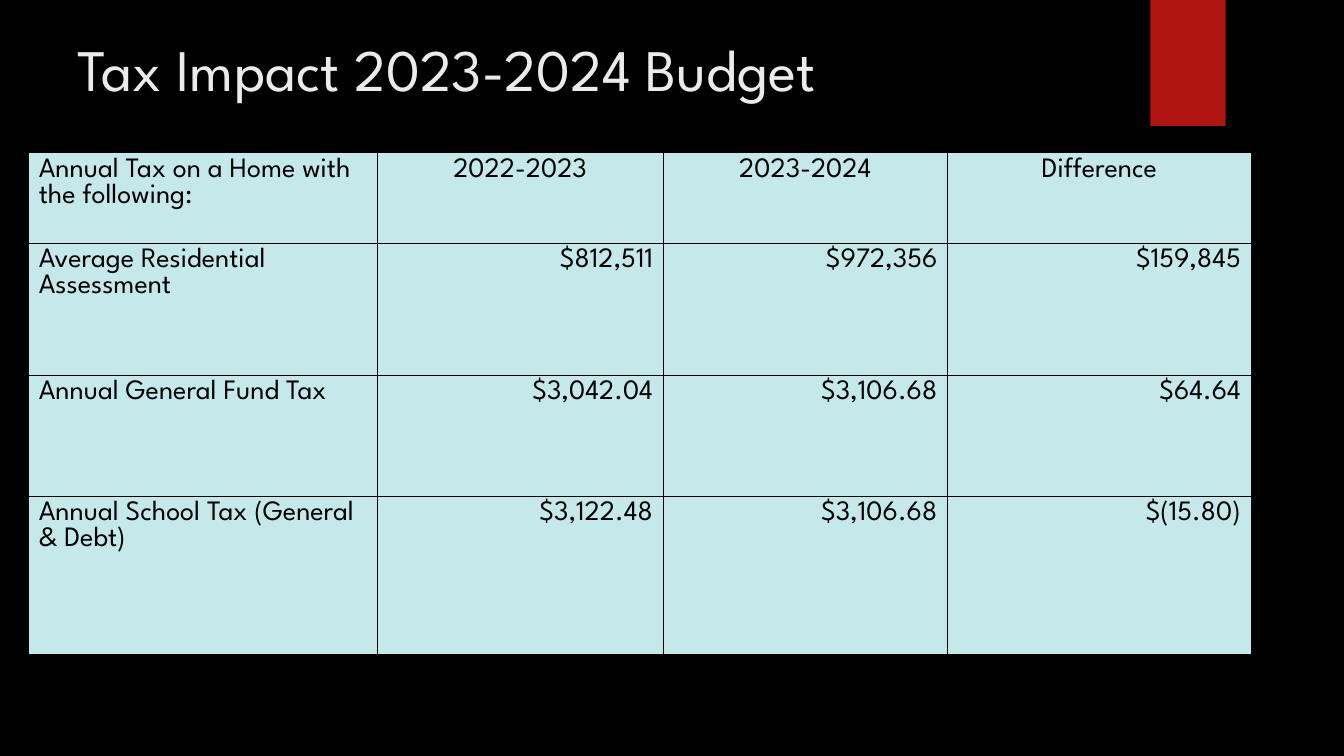
"""Build the tax impact slide for the 2023-2024 budget."""
from dataclasses import dataclass

from lxml import etree
from pptx import Presentation
from pptx.dml.color import RGBColor
from pptx.enum.shapes import MSO_SHAPE
from pptx.enum.text import MSO_ANCHOR, PP_ALIGN
from pptx.oxml.ns import qn
from pptx.slide import Slide
from pptx.table import _Cell
from pptx.text.text import _Paragraph
from pptx.util import Pt

RECTANGLE = MSO_SHAPE.RECTANGLE
MIDDLE = MSO_ANCHOR.MIDDLE
LEFT, CENTER, RIGHT = PP_ALIGN.LEFT, PP_ALIGN.CENTER, PP_ALIGN.RIGHT

BLACK = RGBColor(0x00, 0x00, 0x00)
RED = RGBColor(0xB0, 0x15, 0x13)
OFF_WHITE = RGBColor(0xEB, 0xEB, 0xEB)
PALE_TEAL = RGBColor(0xC5, 0xE8, 0xEA)

FONT_NAME = "League Spartan"
TITLE_SIZE = 42
TABLE_SIZE = 20
BLANK_LAYOUT = 6
COLUMN_WIDTHS = (248.9, 204.3, 203.2, 216.8)
ROW_HEIGHTS = (64.8, 94.3, 86.4, 113)


@dataclass(frozen=True)
class Box:
    """Position and size in points."""

    left: float
    top: float
    width: float
    height: float

    def lengths(self) -> tuple[Pt, Pt, Pt, Pt]:
        """Return the four measures as lengths."""
        return Pt(self.left), Pt(self.top), Pt(self.width), Pt(self.height)


@dataclass(frozen=True)
class TaxRow:
    """One table row: a label and its three values."""

    label: str
    previous: str
    current: str
    difference: str


TITLE_BOX = Box(48.2, 11.5, 741, 73.4)
RIBBON_BOX = Box(821.8, 0, 53.8, 90)
TABLE_BOX = Box(20.5, 109, sum(COLUMN_WIDTHS), sum(ROW_HEIGHTS))

TAX_ROWS = (
    TaxRow("Annual Tax on a Home with the following:", "2022-2023", "2023-2024", "Difference"),
    TaxRow("Average Residential Assessment", "$812,511", "$972,356", "$159,845"),
    TaxRow("Annual General Fund Tax", "$3,042.04", "$3,106.68", "$64.64"),
    TaxRow("Annual School Tax (General & Debt)", "$3,122.48", "$3,106.68", "$(15.80)"),
)


def add_run(paragraph: _Paragraph, text: str, size: float, color: RGBColor) -> None:
    """Add one formatted run to a paragraph."""
    run = paragraph.add_run()
    run.text = text
    run.font.name = FONT_NAME
    run.font.size = Pt(size)
    run.font.color.rgb = color


def add_ribbon(slide: Slide) -> None:
    """Draw the red ribbon at the top edge."""
    ribbon = slide.shapes.add_shape(RECTANGLE, *RIBBON_BOX.lengths())
    ribbon.shadow.inherit = False
    ribbon.fill.solid()
    ribbon.fill.fore_color.rgb = RED
    ribbon.line.fill.background()


def add_title(slide: Slide, text: str) -> None:
    """Write the slide title."""
    frame = slide.shapes.add_textbox(*TITLE_BOX.lengths()).text_frame
    frame.word_wrap = True
    frame.vertical_anchor = MIDDLE
    add_run(frame.paragraphs[0], text, TITLE_SIZE, OFF_WHITE)


def add_borders(cell: _Cell, color: RGBColor) -> None:
    """Give a cell a one-point line on each side."""
    properties = cell._tc.get_or_add_tcPr()
    for side in ("a:lnL", "a:lnR", "a:lnT", "a:lnB"):
        line = etree.SubElement(properties, qn(side), w=str(Pt(1)))
        fill = etree.SubElement(line, qn("a:solidFill"))
        etree.SubElement(fill, qn("a:srgbClr"), val=str(color))


def fill_cell(cell: _Cell, text: str, alignment: PP_ALIGN) -> None:
    """Style a cell and write its text."""
    add_borders(cell, BLACK)
    cell.fill.solid()
    cell.fill.fore_color.rgb = PALE_TEAL
    paragraph = cell.text_frame.paragraphs[0]
    paragraph.alignment = alignment
    add_run(paragraph, text, TABLE_SIZE, BLACK)


def add_tax_table(slide: Slide, rows: tuple[TaxRow, ...]) -> None:
    """Draw the table of assessments and taxes."""
    frame = slide.shapes.add_table(len(rows), len(COLUMN_WIDTHS), *TABLE_BOX.lengths())
    table = frame.table
    table.horz_banding = False
    for column, width in zip(table.columns, COLUMN_WIDTHS):
        column.width = Pt(width)
    for row_index, (tax_row, height) in enumerate(zip(rows, ROW_HEIGHTS)):
        table.rows[row_index].height = Pt(height)
        value_alignment = RIGHT if row_index else CENTER
        fill_cell(table.cell(row_index, 0), tax_row.label, LEFT)
        values = (tax_row.previous, tax_row.current, tax_row.difference)
        for column_index, value in enumerate(values, start=1):
            fill_cell(table.cell(row_index, column_index), value, value_alignment)
    table.first_row = False


def main() -> None:
    """Build and save the presentation."""
    presentation = Presentation()
    presentation.slide_width = Pt(960)
    presentation.slide_height = Pt(540)
    slide = presentation.slides.add_slide(presentation.slide_layouts[BLANK_LAYOUT])
    slide.background.fill.solid()
    slide.background.fill.fore_color.rgb = BLACK
    add_ribbon(slide)
    add_title(slide, "Tax Impact 2023-2024 Budget")
    add_tax_table(slide, TAX_ROWS)
    presentation.save("out.pptx")


if __name__ == "__main__":
    main()
